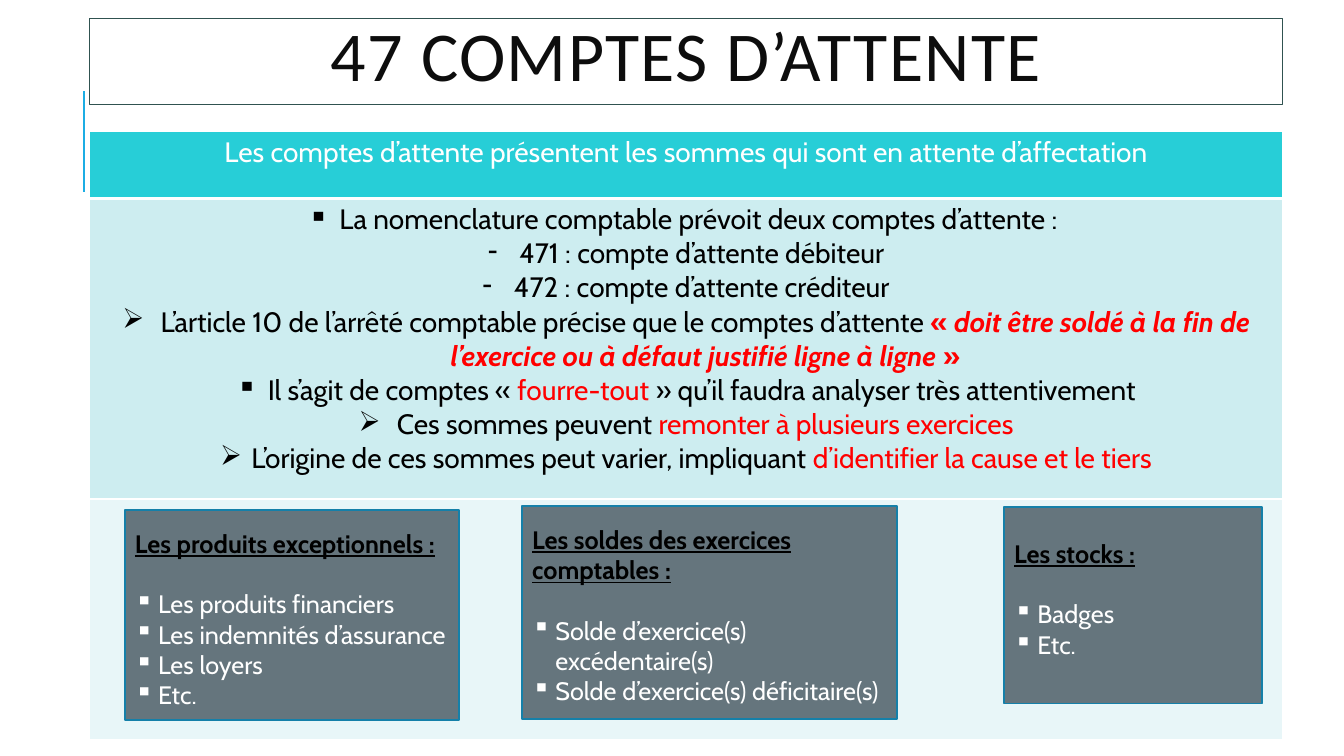
from pptx import Presentation
from pptx.dml.color import RGBColor
from pptx.enum.shapes import MSO_CONNECTOR as CONN, MSO_SHAPE as SHAPE
from pptx.enum.text import MSO_ANCHOR as ANCHOR, PP_ALIGN as ALIGN
from pptx.oxml.ns import qn
from pptx.util import Pt
from lxml.etree import SubElement

# Content
TITLE = "47 COMPTES D’ATTENTE"
HEADER = "Les comptes d’attente présentent les sommes qui sont en attente d’affectation"
# (bullet, indent px, [(text, style)])
POINTS = [
    ("▪", 31, [("La nomenclature comptable prévoit deux comptes d’attente : ", "body")]),
    ("-", 31, [("471 : compte d’attente débiteur", "body")]),
    ("-", 31, [("472 : compte d’attente créditeur", "body")]),
    ("➢", 38, [("L’article 10 de l’arrêté comptable précise que le comptes d’attente ", "body"),
               ("«", "strong"),
               (" doit être soldé à la fin de l’exercice ou à défaut justifié ligne à ligne", "quote"),
               (" »", "strong")]),
    ("▪", 31, [("Il s’agit de comptes « ", "body"), ("fourre-tout ", "alert"),
               ("» qu’il faudra analyser très attentivement", "body")]),
    ("➢", 38, [("Ces sommes peuvent ", "body"), ("remonter à plusieurs exercices", "alert")]),
    ("➢", 31, [("L’origine de ces sommes peut varier, impliquant ", "body"),
               ("d’identifier la cause et le tiers", "alert")]),
]
# box px (left, top, width, height), top inset px, heading, items
CARDS = [
    ((124, 506, 331, 208), 18, "Les produits exceptionnels :",
     ["Les produits financiers", "Les indemnités d’assurance", "Les loyers", "Etc."]),
    ((518, 502, 372, 211), 18, "Les soldes des exercices comptables :",
     ["Solde d’exercice(s) excédentaire(s)", "Solde d’exercice(s) déficitaire(s)"]),
    ((996, 503, 256, 195), 31, "Les stocks :", ["Badges", "Etc."]),
]

# Layout, 100 px to the inch
PX = 9144
SLIDE = (1333, 750)
TITLE_BOX = (89, 18, 1183, 86)
TABLE_AT = (89, 130)
ROWS = (67, 298, 239)
ACCENT = (83, 190, 83, 90)
CARD_INDENT = 23

THEME = {
    "white": "FFFFFF", "accent": "1CADE4", "title_line": "305250",
    "card": "65757D", "card_line": "1580A9",
    "rows": ("27CED7", "CDEDF0", "E8F6F8"),
    "heading_gap": 21.6,
}
BODY = {"name": "Cabin", "size": 20, "color": "000000"}
ALERT = {**BODY, "color": "FF0000"}
STYLES = {
    "title": {"name": "Calibri", "size": 50, "color": "0D0D0D"},
    "header": {**BODY, "color": "FFFFFF"},
    "body": BODY,
    "alert": ALERT,
    "strong": {**ALERT, "bold": True},
    "quote": {**ALERT, "bold": True, "italic": True},
    "card_head": {**BODY, "size": 18, "bold": True, "underline": True},
    "card_item": {**BODY, "size": 18, "color": "FFFFFF"},
}


def px(*values):
    return [v * PX for v in values]


def rgb(name):
    return RGBColor.from_string(name)


def add_run(p, text, style):
    r = p.add_run()
    r.text = text
    for key, value in STYLES[style].items():
        if key == "color":
            r.font.color.rgb = rgb(value)
        else:
            setattr(r.font, key, Pt(value) if key == "size" else value)
    return r


def add_bullet(p, char, indent):
    pPr = p._p.get_or_add_pPr()
    pPr.set("marL", str(indent * PX))
    pPr.set("indent", str(-indent * PX))
    SubElement(pPr, qn("a:buChar")).set("char", char)


def next_paragraph(tf, index):
    return tf.add_paragraph() if index else tf.paragraphs[0]


def add_box(slide, box, fill, line, width):
    s = slide.shapes.add_shape(SHAPE.RECTANGLE, *px(*box))
    s.shadow.inherit = False
    if fill:
        s.fill.solid()
        s.fill.fore_color.rgb = rgb(fill)
    else:
        s.fill.background()
    s.line.color.rgb = rgb(line)
    s.line.width = Pt(width)
    s.text_frame.word_wrap = True
    return s


def style_cell(cell, fill, bottom):
    tcPr = cell._tc.get_or_add_tcPr()
    for side, width in (("L", 1), ("R", 1), ("T", 1), ("B", bottom)):
        ln = SubElement(tcPr, qn(f"a:ln{side}"), w=str(Pt(width)))
        SubElement(SubElement(ln, qn("a:solidFill")), qn("a:srgbClr"), val=THEME["white"])
    cell.fill.solid()
    cell.fill.fore_color.rgb = rgb(fill)
    cell.margin_left, cell.margin_right, cell.margin_top, cell.margin_bottom = px(7, 7, 4, 4)


prs = Presentation()
prs.slide_width, prs.slide_height = px(*SLIDE)
slide = prs.slides.add_slide(prs.slide_layouts[6])

# Accent line
accent = slide.shapes.add_connector(CONN.STRAIGHT, *px(*ACCENT))
accent.line.color.rgb = rgb(THEME["accent"])
accent.line.width = Pt(1.5)
SubElement(accent._element.spPr, qn("a:effectLst"))

# Table: header, points, band behind the cards
frame = slide.shapes.add_table(3, 1, *px(*TABLE_AT, TITLE_BOX[2], sum(ROWS)))
table = frame.table
for i, (height, fill) in enumerate(zip(ROWS, THEME["rows"])):
    table.rows[i].height = height * PX
    style_cell(table.cell(i, 0), fill, 1 if i else 3)

p = table.cell(0, 0).text_frame.paragraphs[0]
p.alignment = ALIGN.CENTER
add_run(p, HEADER, "header")

tf = table.cell(1, 0).text_frame
for i, (char, indent, runs) in enumerate(POINTS):
    p = next_paragraph(tf, i)
    p.alignment = ALIGN.CENTER
    add_bullet(p, char, indent)
    for text, style in runs:
        add_run(p, text, style)

# Cards
for box, inset, heading, items in CARDS:
    tf = add_box(slide, box, THEME["card"], THEME["card_line"], 1.25).text_frame
    tf.vertical_anchor = ANCHOR.TOP
    tf.margin_top = inset * PX
    for i, text in enumerate([heading] + items):
        p = next_paragraph(tf, i)
        p.alignment = ALIGN.LEFT
        if i:
            add_bullet(p, "▪", CARD_INDENT)
        else:
            p.space_after = Pt(THEME["heading_gap"])
        add_run(p, text, "card_item" if i else "card_head")

# Title
tf = add_box(slide, TITLE_BOX, None, THEME["title_line"], 0.75).text_frame
tf.vertical_anchor = ANCHOR.MIDDLE
p = tf.paragraphs[0]
p.alignment = ALIGN.CENTER
p.line_spacing = 0.8
r = add_run(p, TITLE, "title")
r.font._element.set("spc", "100")

prs.save("out.pptx")
